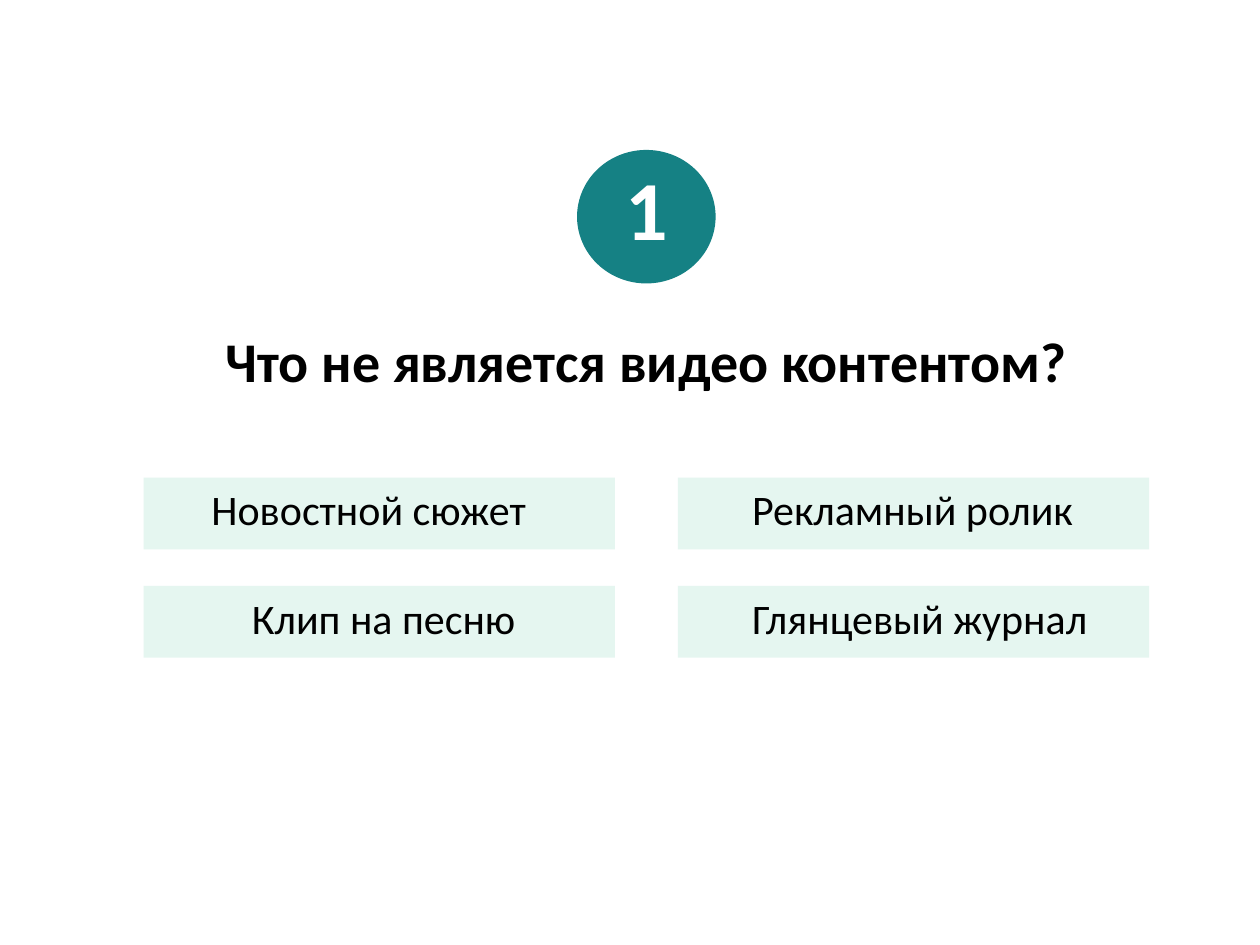
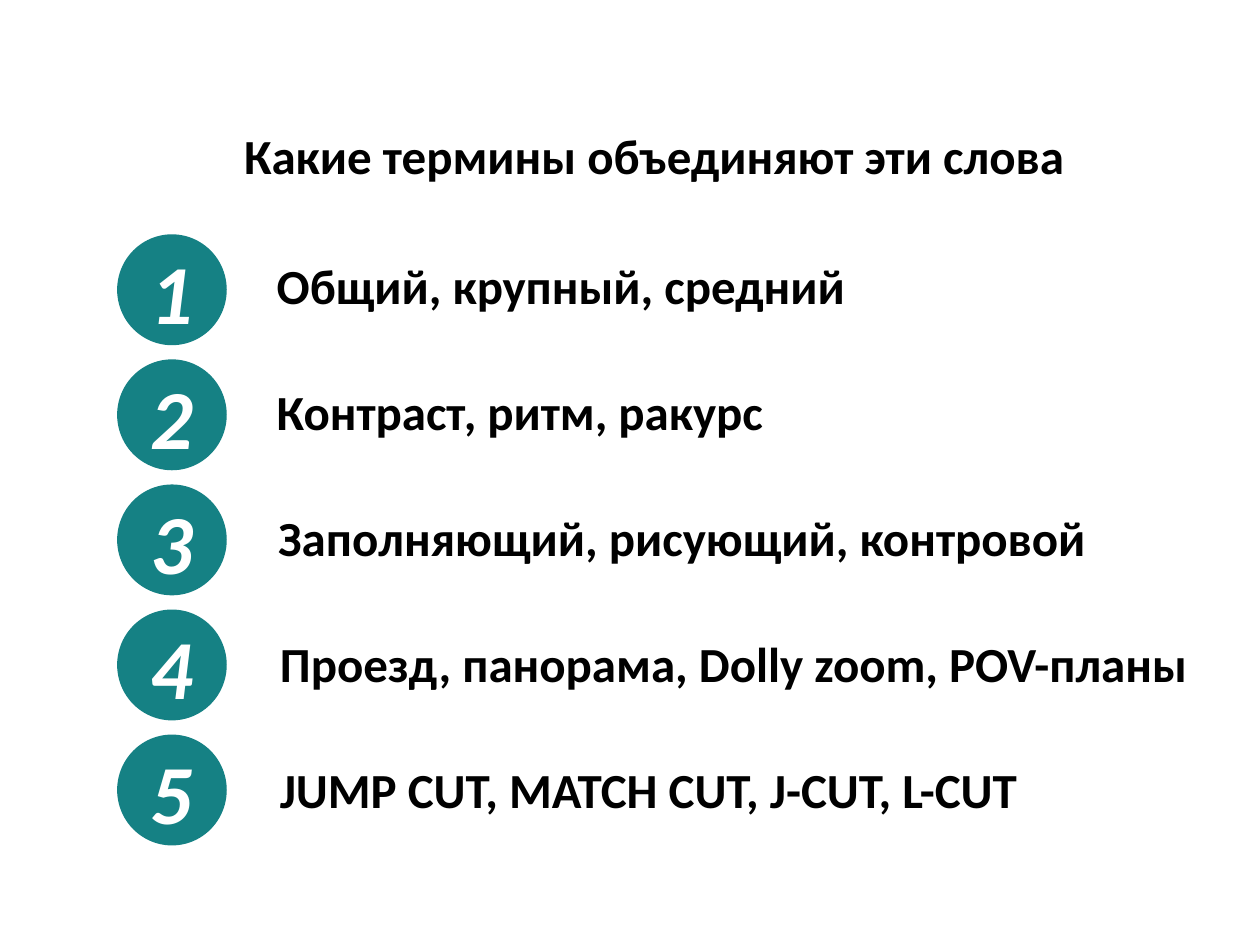
from pptx import Presentation
from pptx.dml.color import RGBColor
from pptx.enum.shapes import MSO_SHAPE
from pptx.enum.text import MSO_AUTO_SIZE, PP_ALIGN
from pptx.util import Inches, Pt

COLORS = {"teal": "158184", "mint": "E5F6F0", "text": "000000", "number": "FFFFFF"}
FONT = "Calibri"


class Quiz:
    """Holds the shared style and the slide being built."""

    def __init__(self):
        self.deck = Presentation()
        self.deck.slide_width = Inches(10)
        self.deck.slide_height = Inches(7.5)
        self.slide = None

    def new_slide(self):
        self.slide = self.deck.slides.add_slide(self.deck.slide_layouts[6])

    def shape(self, kind, box, color, shapes=None):
        shapes = shapes or self.slide.shapes
        shape = shapes.add_shape(kind, *map(Inches, box))
        shape.shadow.inherit = False
        shape.fill.solid()
        shape.fill.fore_color.rgb = RGBColor.from_string(COLORS[color])
        shape.line.fill.background()

    def text(self, words, box, size, color="text", bold=True, italic=False,
             align=PP_ALIGN.CENTER, wrap=False, shapes=None):
        shapes = shapes or self.slide.shapes
        frame = shapes.add_textbox(*map(Inches, box)).text_frame
        frame.word_wrap = wrap
        frame.auto_size = MSO_AUTO_SIZE.SHAPE_TO_FIT_TEXT
        frame.text = words
        paragraph = frame.paragraphs[0]
        paragraph.alignment = align
        font = paragraph.runs[0].font
        font.name, font.size = FONT, Pt(size)
        font.bold, font.italic = bold, italic
        font.color.rgb = RGBColor.from_string(COLORS[color])

    def badge(self, number, circle_box, number_box, italic=False):
        group = self.slide.shapes.add_group_shape()
        self.shape(MSO_SHAPE.OVAL, circle_box, "teal", group.shapes)
        self.text(str(number), number_box, 48, "number", italic=italic,
                  wrap=True, shapes=group.shapes)


def build_choice_slide(quiz):
    quiz.new_slide()
    quiz.badge(1, (4.58, 1.19, 1.1, 1.06), (4.52, 1.19, 1.22, 0.91))
    quiz.text("Что не является видео контентом?", (1.6, 2.54, 7.06, 0.64), 32)

    # Answers in two columns: words, left edge and width of the words
    answers = [
        [("Новостной сюжет", 1.58, 2.72), ("Рекламный ролик", 5.87, 2.78)],
        [("Клип на песню", 1.9, 2.32), ("Глянцевый журнал", 5.87, 2.89)],
    ]
    for row, pair in enumerate(answers):
        top = 3.79 + 0.86 * row
        for column, (answer, left, width) in enumerate(pair):
            panel_box = (1.14 + 4.24 * column, top, 3.74, 0.57)
            quiz.shape(MSO_SHAPE.RECTANGLE, panel_box, "mint")
            quiz.text(answer, (left, top, width, 0.5), 24, bold=False,
                      align=PP_ALIGN.LEFT)


def build_terms_slide(quiz):
    quiz.new_slide()
    quiz.text("Какие термины объединяют эти слова", (1.8, 0.95, 6.78, 0.57), 28)

    # Numbered rows: words, box width and whether the words wrap
    terms = [
        ("Общий, крупный, средний", 4.76, False),
        ("Контраст, ритм, ракурс", 4.11, False),
        ("Заполняющий, рисующий, контровой", 6.68, False),
        ("Проезд, панорама, Dolly zoom, POV-планы", 7.5, False),
        ("JUMP CUT, MATCH CUT, J-CUT, L-CUT", 6.15, True),
    ]
    first_top, last_top = 1.86, 5.83
    step = (last_top - first_top) / (len(terms) - 1)
    for row, (words, width, wrap) in enumerate(terms):
        top = first_top + step * row
        quiz.badge(row + 1, (0.93, top, 0.87, 0.88), (1.07, top, 0.58, 0.89),
                   italic=True)
        quiz.text(words, (2.07, 1.98 + row, width, 0.57), 28, wrap=wrap)


def main():
    quiz = Quiz()
    build_choice_slide(quiz)
    build_terms_slide(quiz)
    quiz.deck.save("out.pptx")


if __name__ == "__main__":
    main()
